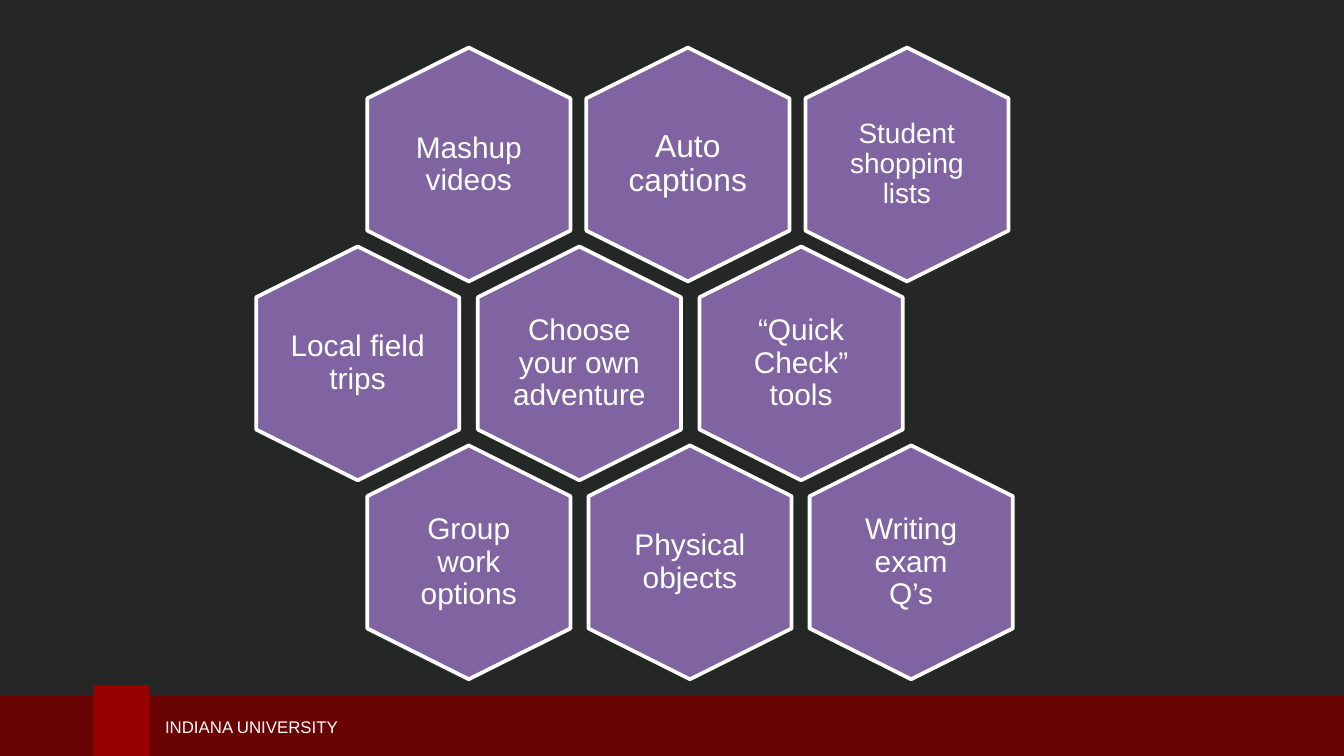
"""Build the slide of nine teaching ideas in a honeycomb."""
from pptx import Presentation
from pptx.dml.color import RGBColor
from pptx.enum.shapes import MSO_SHAPE
from pptx.enum.text import MSO_ANCHOR, PP_ALIGN
from pptx.util import Cm, Pt

RECT, HEXAGON = MSO_SHAPE.RECTANGLE, MSO_SHAPE.HEXAGON
MIDDLE = MSO_ANCHOR.MIDDLE
LEFT, CENTER = PP_ALIGN.LEFT, PP_ALIGN.CENTER

COLORS = {
    "background": "252626",
    "band": "690304",
    "tab": "990000",
    "hexagon": "8064A2",
    "white": "FFFFFF",
}
HEX_W, HEX_H = 4.42, 3.84
TEXT_W, TEXT_H = 2.64, 3.05
TOP, ROW_PITCH = 1.19, 3.76

# Each row: left edge, column pitch, then (text, size, inset) per cell.
ROWS = [
    (6.65, 4.14, [("Mashup videos", 16, 0), ("Auto captions", 17, 0.17),
                  ("Student shopping lists", 15, 0.16)]),
    (4.55, 4.19, [("Local field trips", 16, 0), ("Choose your own adventure", 16, 0),
                  ("“Quick Check” tools", 16, 0.17)]),
    (6.65, 4.18, [("Group work options", 16, 0), ("Physical objects", 16, 0.17),
                  ("Writing exam Q’s", 16, 0.17)]),
]


def color(name):
    """Return the named colour."""
    return RGBColor.from_string(COLORS[name])


def set_attrs(obj, values):
    """Set each attribute of obj from a dict."""
    for name, value in values.items():
        setattr(obj, name, value)


def add_shape(s, kind, box, fill):
    """Add a filled shape without line or shadow."""
    sp = s.shapes.add_shape(kind, *map(Cm, box))
    sp.shadow.inherit = False
    sp.fill.solid()
    sp.fill.fore_color.rgb = color(fill)
    sp.line.fill.background()
    return sp


def add_text(s, box, text, size, align, insets, spacing=1.0):
    """Add a wrapped, vertically centred text box."""
    tf = s.shapes.add_textbox(*map(Cm, box)).text_frame
    sides = ("margin_left", "margin_top", "margin_right", "margin_bottom")
    set_attrs(tf, dict(zip(sides, map(Cm, insets))))
    set_attrs(tf, {"word_wrap": True, "vertical_anchor": MIDDLE})
    p = tf.paragraphs[0]
    set_attrs(p, {"alignment": align, "line_spacing": spacing})
    r = p.add_run()
    r.text = text
    set_attrs(r.font, {"name": "Arial", "size": Pt(size)})
    r.font.color.rgb = color("white")


def add_cell(s, left, top, text, size, inset):
    """Add one upright hexagon with its label."""
    sp = add_shape(s, HEXAGON, (left, top, HEX_W, HEX_H), "hexagon")
    sp.rotation = 90
    sp.adjustments[0] = 0.25
    sp.line.color.rgb = color("white")
    sp.line.width = Pt(2)
    box = (left + (HEX_W - TEXT_W) / 2, top + (HEX_H - TEXT_H) / 2, TEXT_W, TEXT_H)
    add_text(s, box, text, size, CENTER, [inset] * 4, 0.9)


def add_footer(s):
    """Add the footer band, its tab and the name."""
    add_shape(s, RECT, (-0.08, 13.15, 25.63, 1.28), "band")
    add_shape(s, RECT, (1.76, 12.95, 1.07, 1.48), "tab")
    add_text(s, (2.87, 13.41, 10.03, 0.64), "INDIANA UNIVERSITY", 9, LEFT,
             (0.25, 0.13, 0.25, 0.13))


def main():
    """Build and save the slide."""
    prs = Presentation()
    set_attrs(prs, {"slide_width": Cm(25.4), "slide_height": Cm(14.29)})
    s = prs.slides.add_slide(prs.slide_layouts[6])
    s.background.fill.solid()
    s.background.fill.fore_color.rgb = color("background")
    add_footer(s)
    for row, (left, pitch, cells) in enumerate(ROWS):
        for col, cell in enumerate(cells):
            add_cell(s, left + col * pitch, TOP + row * ROW_PITCH, *cell)
    prs.save("out.pptx")


if __name__ == "__main__":
    main()
